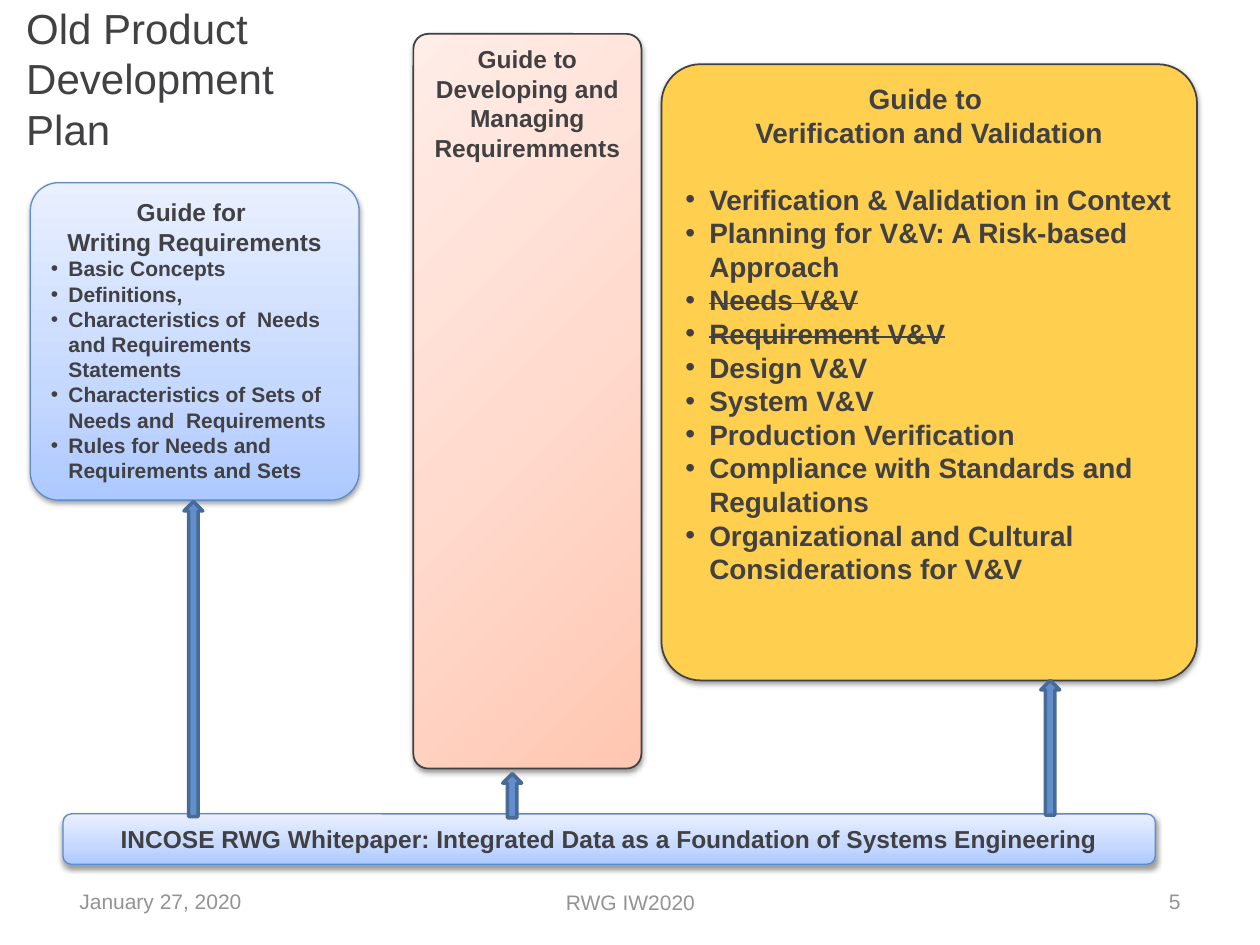
from dataclasses import dataclass

from pptx import Presentation
from pptx.dml.color import RGBColor
from pptx.enum.shapes import MSO_SHAPE
from pptx.enum.text import MSO_ANCHOR, MSO_AUTO_SIZE, PP_ALIGN
from pptx.oxml import parse_xml
from pptx.oxml.ns import nsdecls
from pptx.util import Pt

ROUND, ARROW = MSO_SHAPE.ROUNDED_RECTANGLE, MSO_SHAPE.UP_ARROW
TOP, MIDDLE = MSO_ANCHOR.TOP, MSO_ANCHOR.MIDDLE
LEFT, CENTER, RIGHT = PP_ALIGN.LEFT, PP_ALIGN.CENTER, PP_ALIGN.RIGHT
FIT = MSO_AUTO_SIZE.SHAPE_TO_FIT_TEXT

FONT = "Arial"
INK, GREY, EDGE = "414042", "939393", "5C8CC9"
BLUE = ((0, "ADC9FF"), (35, "C5D8FF"), (100, "E9F0FF"))
PEACH = ((0, "FFC7B1"), (50, "FFDBCF"), (100, "FFEDE7"))
YELLOW = "FFCF50"


@dataclass
class Card:
    at: tuple
    fill: str | tuple
    head: str
    size: float = 14
    round: float = 0.167
    angle: int = 270
    edge: str = EDGE
    width: float = 0.75
    anchor: MSO_ANCHOR = TOP
    items: tuple = ()
    item_size: float = 12
    indent: float = 10
    gap: float = 0
    after: float = 0
    struck: tuple = ()


CARDS = (
    Card((17.3, 104.4, 187.9, 181.4), BLUE, "Guide for \vWriting Requirements",
         round=0.089,
         items=("Basic Concepts",
                "Definitions,",
                "Characteristics of  Needs and Requirements Statements",
                "Characteristics of Sets of Needs and  Requirements",
                "Rules for Needs and Requirements and Sets")),
    Card((236.2, 19.4, 130.3, 419.8), PEACH,
         "Guide to Developing and Managing Requiremments",
         round=0.065, angle=225, edge=INK, width=1, after=3),
    Card((378, 36.7, 306, 352.1), YELLOW,
         "Guide to \vVerification and Validation",
         size=16, round=0.073, edge=INK, width=1,
         item_size=16, indent=13.7, gap=19,
         items=("Verification & Validation in Context",
                "Planning for V&V: A Risk-based Approach",
                "Needs V&V",
                "Requirement V&V",
                "Design V&V",
                "System V&V",
                "Production Verification",
                "Compliance with Standards and Regulations",
                "Organizational and Cultural Considerations for V&V"),
         struck=("Needs V&V", "Requirement V&V")),
    Card((36, 465.1, 624.2, 28.8), BLUE,
         "INCOSE RWG Whitepaper: Integrated Data as a Foundation of "
         "Systems Engineering", anchor=MIDDLE),
)

# left, top, height
ARROWS = ((287.3, 442.1, 25.2), (594.7, 388.8, 77), (105.1, 286.6, 180))

# left, top, width, text, alignment
FOOTERS = ((36, 500.4, 167.8, "January 27, 2020", LEFT),
           (246.2, 501.1, 228.2, "RWG IW2020", CENTER),
           (516.2, 500.4, 167.8, "5", RIGHT))


def color(code: str) -> RGBColor:
    return RGBColor.from_string(code)


def box(at: tuple) -> list:
    return [Pt(n) for n in at]


def write(para, text: str, size: float, ink: str, bold=False, align=LEFT):
    para.text = text
    para.alignment = align
    for run in para.runs:
        font = run.font
        font.name, font.size, font.bold = FONT, Pt(size), bold
        font.color.rgb = color(ink)


def bullet(para, indent: float):
    props = para._p.get_or_add_pPr()
    props.set("marL", str(Pt(indent)))
    props.set("indent", str(-Pt(indent)))
    for part in (f'<a:buFont {nsdecls("a")} typeface="{FONT}"/>',
                 f'<a:buChar {nsdecls("a")} char="•"/>'):
        props.append(parse_xml(part))


def blend(shape, stops: tuple, angle: int):
    """Fill the shape with a linear gradient of any number of stops."""
    shape.fill.gradient()
    marks = "".join(f'<a:gs pos="{pos * 1000}"><a:srgbClr val="{code}"/></a:gs>'
                    for pos, code in stops)
    props = shape._element.spPr
    old = props.find("{*}gradFill")
    props.replace(old, parse_xml(
        f'<a:gradFill {nsdecls("a")} rotWithShape="1"><a:gsLst>{marks}</a:gsLst>'
        f'<a:lin ang="{angle * 60000}" scaled="0"/></a:gradFill>'))


def shade(shape):
    """Cast a soft shadow straight down."""
    shape._element.spPr.find("{*}effectLst").append(parse_xml(
        f'<a:outerShdw {nsdecls("a")} blurRad="{Pt(3.1)}" dist="{Pt(1.6)}" '
        'dir="5400000" rotWithShape="0"><a:srgbClr val="000000">'
        '<a:alpha val="38000"/></a:srgbClr></a:outerShdw>'))


def add_form(slide, kind, at: tuple, edge: str, width: float):
    shape = slide.shapes.add_shape(kind, *box(at))
    shape.shadow.inherit = False
    shape.line.color.rgb = color(edge)
    shape.line.width = Pt(width)
    return shape


def paint(shape, code: str):
    shape.fill.solid()
    shape.fill.fore_color.rgb = color(code)


def add_card(slide, card: Card):
    shape = add_form(slide, ROUND, card.at, card.edge, card.width)
    shape.adjustments[0] = card.round
    if isinstance(card.fill, str):
        paint(shape, card.fill)
    else:
        blend(shape, card.fill, card.angle)
    shade(shape)
    frame = shape.text_frame
    frame.word_wrap = True
    frame.vertical_anchor = card.anchor
    head = frame.paragraphs[0]
    write(head, card.head, card.size, INK, True, CENTER)
    head.space_after = Pt(card.after)
    for i, item in enumerate(card.items):
        para = frame.add_paragraph()
        if i == 0:
            para.space_before = Pt(card.gap)
        bullet(para, card.indent)
        write(para, item, card.item_size, INK, True)
        if item in card.struck:
            para.runs[0]._r.get_or_add_rPr().set("strike", "sngStrike")


def add_label(slide, at: tuple, text: str, size: float, ink: str, align=LEFT):
    frame = slide.shapes.add_textbox(*box(at)).text_frame
    frame.word_wrap = True
    write(frame.paragraphs[0], text, size, ink, align=align)
    return frame


def main():
    deck = Presentation()
    deck.slide_width, deck.slide_height = Pt(720), Pt(540)
    slide = deck.slides.add_slide(deck.slide_layouts[6])

    for left, top, width, text, align in FOOTERS:
        frame = add_label(slide, (left, top, width, 28.8), text, 12, GREY, align)
        frame.vertical_anchor = MIDDLE
        frame.margin_left = frame.margin_right = Pt(9.4)
        frame.margin_top = frame.margin_bottom = Pt(5)
    for card in CARDS:
        add_card(slide, card)
    for left, top, height in ARROWS:
        arrow = add_form(slide, ARROW, (left, top, 10.8, height), "486A96", 2)
        paint(arrow, "618FCB")
    title = add_label(slide, (7.9, -2.2, 180, 94.3),
                      "Old Product Development Plan", 24, INK)
    title.auto_size = FIT

    deck.save("out.pptx")


if __name__ == "__main__":
    main()
